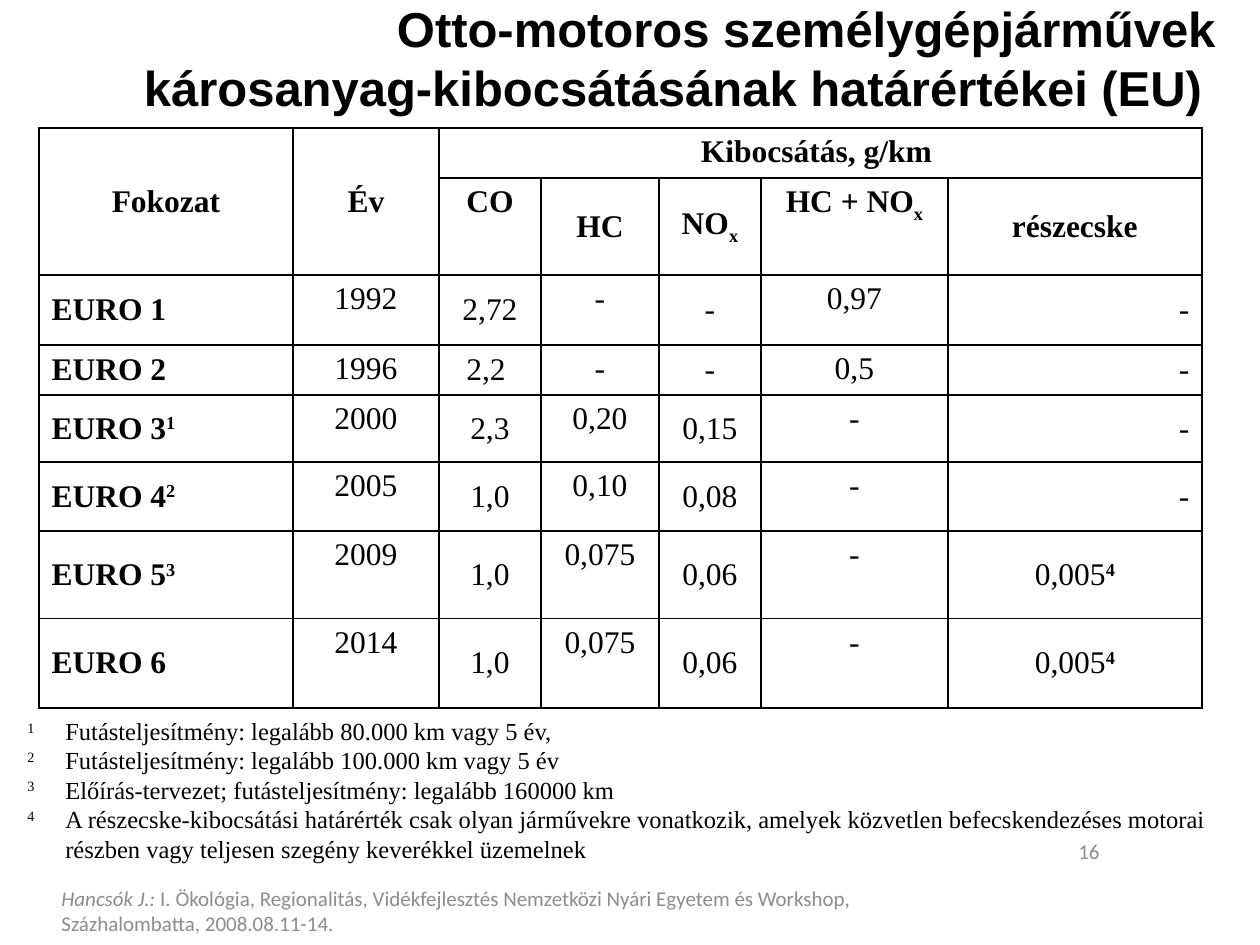
import lxml.etree
import pptx
import pptx.dml.color
import pptx.enum.text
import pptx.oxml.ns
import pptx.util

ALIGN = pptx.enum.text.PP_ALIGN
ANCHOR = pptx.enum.text.MSO_ANCHOR
COLORS = {"ink": "000000", "muted": "8C8C8C"}
SCALE = 914400 / 126
SUPER, SUB = 30000, -25000
HANGING = 64

COLUMN_WIDTHS = [254, 146, 102, 118, 102, 187, 254]
ROW_HEIGHTS = [50, 97, 70, 50, 67, 69, 88, 89]
LIMITS = [
    ["Fokozat", "Év", "Kibocsátás, g/km ", "", "", "", ""],
    ["", "", "CO", "HC", "NO_x", "HC + NO_x", "részecske"],
    ["EURO 1", "1992", "2,72", "-", "-", "0,97", "-"],
    ["EURO 2", "1996", "2,2 ", "-", "-", "0,5", "-"],
    ["EURO 3^1", "2000", "2,3", "0,20", "0,15", "-", "-"],
    ["EURO 4^2", "2005", "1,0", "0,10", "0,08", "-", "-"],
    ["EURO 5^3", "2009", "1,0", "0,075", "0,06", "-", "0,005^4"],
    ["EURO 6", "2014", "1,0", "0,075", "0,06", "-", "0,005^4"],
]
FOOTNOTES = [
    "Futásteljesítmény: legalább 80.000 km vagy 5 év,",
    "Futásteljesítmény: legalább 100.000 km vagy 5 év",
    "Előírás-tervezet; futásteljesítmény: legalább 160000 km",
    "A részecske-kibocsátási határérték csak olyan járművekre vonatkozik, amelyek "
    "közvetlen befecskendezéses motorai részben vagy teljesen szegény keverékkel üzemelnek",
]

TITLE_FONT = {"name": "Arial", "size": pptx.util.Pt(28), "bold": True}
TABLE_FONT = {"name": "Times New Roman", "size": pptx.util.Pt(18)}
NOTE_FONT = {"name": "Times New Roman", "size": pptx.util.Pt(14)}
FOOTER_FONT = {"name": "Calibri", "size": pptx.util.Pt(12)}
FRAME = {"word_wrap": True, "vertical_anchor": ANCHOR.MIDDLE,
         "auto_size": pptx.enum.text.MSO_AUTO_SIZE.NONE}


def px(length):
    return pptx.util.Emu(round(length * SCALE))


def apply(target, values):
    for key, value in values.items():
        setattr(target, key, value)


def add_run(paragraph, text, font, color="ink", baseline=0, **extra):
    run = paragraph.add_run()
    run.text = text
    apply(run.font, {**font, **extra})
    run.font.color.rgb = pptx.dml.color.RGBColor.from_string(COLORS[color])
    if baseline:
        run.font._element.set("baseline", str(baseline))


def hang(paragraph, indent):
    properties = paragraph._p.get_or_add_pPr()
    properties.set("marL", str(px(indent)))
    properties.set("indent", str(-px(indent)))


def add_frame(slide, box):
    frame = slide.shapes.add_textbox(*map(px, box)).text_frame
    apply(frame, FRAME)
    return frame


def place_title(slide, box):
    title = slide.shapes.title
    apply(title, dict(zip(("left", "top", "width", "height"), map(px, box))))
    apply(title.text_frame, FRAME)
    heading = title.text_frame.paragraphs[0]
    heading.alignment = ALIGN.RIGHT
    add_run(heading, "Otto-motoros személygépjárművek "
            "károsanyag-kibocsátásának határértékei (EU) ", TITLE_FONT)


def draw_borders(cell, widths):
    properties = cell._tc.get_or_add_tcPr()
    for side, width in widths.items():
        line = lxml.etree.SubElement(properties, pptx.oxml.ns.qn(f"a:ln{side}"),
                                     w=str(pptx.util.Pt(width)))
        fill = lxml.etree.SubElement(line, pptx.oxml.ns.qn("a:solidFill"))
        lxml.etree.SubElement(fill, pptx.oxml.ns.qn("a:srgbClr"), val=COLORS["ink"])


def write_limit(cell, text, row, column):
    limit = cell.text_frame.paragraphs[0]
    hang(limit, HANGING)
    header = row < 2
    if column == 0 and not header:
        limit.alignment = ALIGN.LEFT
    elif column == 6 and text == "-":
        limit.alignment = ALIGN.RIGHT
    else:
        limit.alignment = ALIGN.CENTER
    bold = header or column == 0
    for mark, baseline in (("^", SUPER), ("_", SUB)):
        if mark in text:
            main, script = text.split(mark)
            add_run(limit, main, TABLE_FONT, bold=bold)
            add_run(limit, script, TABLE_FONT, baseline=baseline, bold=True)
            return
    add_run(limit, text, TABLE_FONT, bold=bold)


def place_limits(slide, box):
    rows, columns = len(ROW_HEIGHTS), len(COLUMN_WIDTHS)
    limits = slide.shapes.add_table(rows, columns, *map(px, box)).table
    apply(limits, {"first_row": False, "horz_banding": False})
    for column, width in zip(limits.columns, COLUMN_WIDTHS):
        column.width = px(width)
    for row, height in zip(limits.rows, ROW_HEIGHTS):
        row.height = px(height)
    for first, last in (((0, 0), (1, 0)), ((0, 1), (1, 1)), ((0, 2), (0, 6))):
        limits.cell(*first).merge(limits.cell(*last))

    top_cells = {(0, 2), (1, 2), (1, 5)}
    top_cells |= {(row, column) for row in range(2, rows) for column in (1, 3, 5)}
    for row, texts in enumerate(LIMITS):
        for column, text in enumerate(texts):
            cell = limits.cell(row, column)
            draw_borders(cell, {
                "L": 1.5 if column == 0 else 1,
                "R": 1.5 if column + cell.span_width == columns else 1,
                "T": 1.5 if row == 0 else 1,
                "B": 1.5 if row + cell.span_height == rows else 1,
            })
            cell.fill.background()
            cell.vertical_anchor = ANCHOR.TOP if (row, column) in top_cells else ANCHOR.MIDDLE
            if text:
                write_limit(cell, text, row, column)


def place_footnotes(slide, box):
    frame = add_frame(slide, box)
    for number, text in enumerate(FOOTNOTES, 1):
        note = frame.paragraphs[0] if number == 1 else frame.add_paragraph()
        hang(note, 38)
        add_run(note, f"{number}\t", NOTE_FONT, baseline=SUPER)
        add_run(note, text, NOTE_FONT)


def place_footer(slide, box):
    citation = add_frame(slide, box).paragraphs[0]
    add_run(citation, "Hancsók J.: ", FOOTER_FONT, "muted", italic=True)
    add_run(citation, "I. Ökológia, Regionalitás, Vidékfejlesztés Nemzetközi Nyári "
            "Egyetem és Workshop, Százhalombatta, 2008.08.11-14.", FOOTER_FONT, "muted")


def place_page_number(slide, box):
    number = add_frame(slide, box).paragraphs[0]
    number.alignment = ALIGN.RIGHT
    add_run(number, "16", FOOTER_FONT, "muted")


def main():
    deck = pptx.Presentation()
    apply(deck, {"slide_width": px(1260), "slide_height": px(945)})
    slide = deck.slides.add_slide(deck.slide_layouts[5])
    place_footer(slide, (49, 876, 886, 69))
    place_page_number(slide, (850, 820, 262, 63))
    place_title(slide, (94, 10, 1134, 94))
    place_limits(slide, (39, 128, sum(COLUMN_WIDTHS), sum(ROW_HEIGHTS)))
    place_footnotes(slide, (15, 709, 1245, 161))
    deck.save("out.pptx")


if __name__ == "__main__":
    main()
